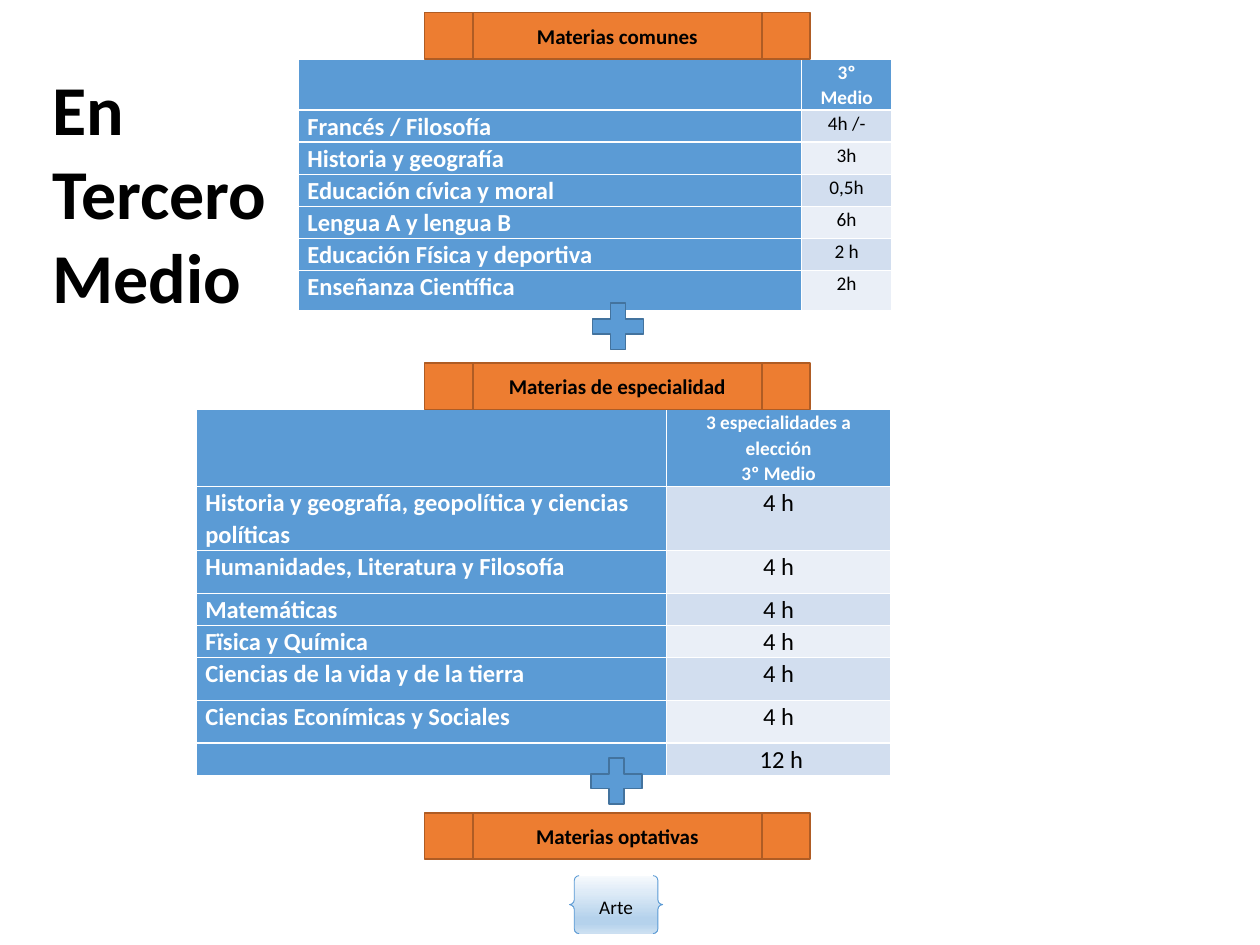
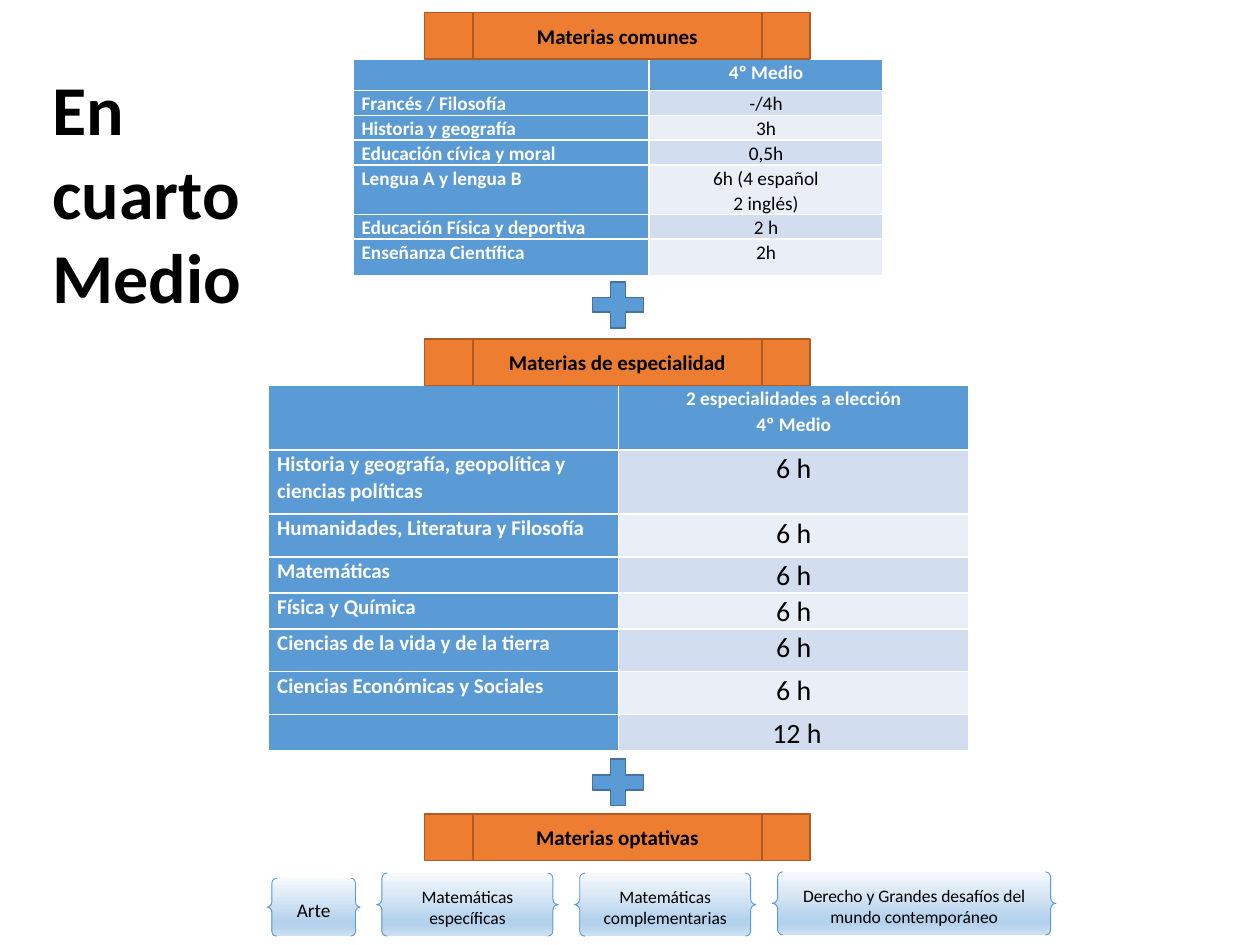
from lxml.etree import SubElement
from pptx import Presentation
from pptx.dml.color import RGBColor
from pptx.enum.shapes import MSO_SHAPE
from pptx.enum.text import MSO_ANCHOR, PP_ALIGN
from pptx.oxml.ns import qn
from pptx.util import Inches, Pt

prs = Presentation()
prs.slide_width, prs.slide_height = Inches(10), Inches(7.5)
COL, ROW = prs.slide_width / 100, prs.slide_height / 75  # grid of 100 x 75

BLACK, WHITE, BLUE, ORANGE = "000000", "FFFFFF", "5B9BD5", "ED7D31"
BANDS = ["D2DEEF", "EAEFF7"]
SHEEN = [(0, "F7FAFD"), (28, "DEEBF7"), (74, "B5D2EC"), (83, "B5D2EC"), (100, "CEE1F2")]
BANNER = {"left": 33.7, "width": 30.6, "height": 3.7}
LABELS = ["Materias comunes", "Materias de especialidad", "Materias optativas"]
LEFT, CENTER = PP_ALIGN.LEFT, PP_ALIGN.CENTER


def write(tf, text, size, color=BLACK, bold=False, align=CENTER, spacing=None):
    """Fill a text frame, one paragraph per line of text."""
    for i, line in enumerate(text.split("\n")):
        p = tf.add_paragraph() if i else tf.paragraphs[0]
        p.alignment, p.line_spacing = align, spacing
        if line:
            r = p.add_run()
            r.text = line
            r.font.color.rgb = RGBColor.from_string(color)
            for name, value in {"name": "Calibri", "size": Pt(size), "bold": bold}.items():
                setattr(r.font, name, value)
        else:  # keeps an empty cell as low as its row
            SubElement(p._p, qn("a:endParaRPr"), sz=str(size * 100))


def add_box(s, kind, left, top, width, height, fill, line, weight=1):
    """Add a preset shape placed in grid units."""
    sp = s.shapes.add_shape(kind, int(left * COL), int(top * ROW), int(width * COL), int(height * ROW))
    sp.shadow.inherit = False
    sp.fill.solid()
    sp.fill.fore_color.rgb = RGBColor.from_string(fill)
    sp.line.color.rgb = RGBColor.from_string(line)
    sp.line.width = Pt(weight)
    sp.text_frame.word_wrap = True
    sp.text_frame.vertical_anchor = MSO_ANCHOR.MIDDLE
    return sp


COMMON = ["Francés / Filosofía", "Historia y geografía", "Educación cívica y moral",
          "Lengua A y lengua B", "Educación Física y deportiva", "Enseñanza Científica"]
SPECIAL = ["Historia y geografía, geopolítica y ciencias políticas",
           "Humanidades, Literatura y Filosofía", "Matemáticas"]
LIFE = "Ciencias de la vida y de la tierra"

# Table: left, column widths, row heights, subject size, hours size, subjects, hours
years = [
    {"title": "En Tercero Medio",
     "banners": [1, 28.8, 64.5],
     "pluses": [(46.3, 23.4), (46.2, 59.5)],
     "tables": [
         (23.7, [39.9, 7.2], [4] + [2.55] * 5 + [3.2], 14, 11, COMMON,
          ["3º Medio", "4h /-", "3h", "0,5h", "6h", "2 h", "2h"]),
         (15.6, [37.3, 17.8], [6.1, 5.1, 3.4, 2.55, 2.55, 3.4, 3.4, 2.55], 14, 14,
          SPECIAL + ["Fïsica y Química", LIFE, "Ciencias Econímicas y Sociales", ""],
          ["3 especialidades a elección\n3º Medio"] + ["4 h"] * 6 + [" 12 h"])],
     "options": [("Arte", 45.2, 69.5, 7.4, 4.6, 11)]},
    {"title": "En cuarto Medio",
     "banners": [1, 26.9, 64.6],
     "pluses": [(46.3, 21.7), (46.3, 59.6)],
     "tables": [
         (28, [23.5, 18.6], [2.5, 1.95, 1.95, 1.95, 3.9, 1.95, 2.9], 11, 11, COMMON,
          ["4º Medio", "-/4h", "3h", "0,5h", "6h (4 español\n2 inglés)", "2 h", "2h"]),
         (21.3, [27.8, 27.8], [5.1, 5.1, 3.4, 2.85, 2.85, 3.4, 3.4, 2.85], 12, 16,
          SPECIAL + ["Física y Química", LIFE, "Ciencias Económicas y Sociales", ""],
          ["2 especialidades a elección\n4º Medio"] + ["6 h"] * 6 + [" 12 h"])],
     "options": [("Arte", 21.2, 69.7, 7.4, 4.6, 11),
                 ("Matemáticas específicas", 29.9, 69.3, 14.4, 5, 10),
                 ("Matemáticas complementarias", 45.6, 69.3, 14.4, 5, 10),
                 ("Derecho y Grandes desafíos del mundo contemporáneo", 61.3, 69.2, 22.5, 5, 10)]},
]

for year in years:
    s = prs.slides.add_slide(prs.slide_layouts[6])

    for banner_top, table in zip(year["banners"], year["tables"]):
        left, widths, heights, subject_size, hours_size, subjects, hours = table
        top = banner_top + BANNER["height"]
        tbl = s.shapes.add_table(len(heights), 2, int(left * COL), int(top * ROW),
                                 int(sum(widths) * COL), int(sum(heights) * ROW)).table
        for column, width in zip(tbl.columns, widths):
            column.width = int(width * COL)
        for i, (height, subject, hour) in enumerate(zip(heights, [""] + subjects, hours)):
            tbl.rows[i].height = int(height * ROW)
            head = i == 0
            formats = [(subject, subject_size, WHITE, True, LEFT, BLUE),
                       (hour, 11, WHITE, True, CENTER, BLUE) if head else
                       (hour, hours_size, BLACK, False, CENTER, BANDS[(i - 1) % 2])]
            for cell, (text, size, color, bold, align, fill) in zip(tbl.rows[i].cells, formats):
                cell.margin_left = cell.margin_right = Inches(0.07)
                cell.margin_top = cell.margin_bottom = 0
                cell.fill.solid()
                cell.fill.fore_color.rgb = RGBColor.from_string(fill)
                write(cell.text_frame, text, size, color, bold, align, 1.07)

    for text, left, top, width, height, size in year["options"]:
        sp = add_box(s, MSO_SHAPE.DOUBLE_BRACE, left, top, width, height, BLUE, BLUE, 0.5)
        sp.fill.gradient()
        sp.fill.gradient_angle = 270
        stops = sp._element.find(".//" + qn("a:gsLst"))
        stops.clear()
        for position, color in SHEEN:
            stop = SubElement(stops, qn("a:gs"), pos=str(position * 1000))
            SubElement(stop, qn("a:srgbClr"), val=color)
        write(sp.text_frame, text, size)

    for label, top in zip(LABELS, year["banners"]):
        sp = add_box(s, MSO_SHAPE.FLOWCHART_PREDEFINED_PROCESS, top=top, fill=ORANGE, line="AF5C24", **BANNER)
        write(sp.text_frame, label, 12, bold=True)

    for left, top in year["pluses"]:
        add_box(s, MSO_SHAPE.MATH_PLUS, left, top, 5.5, 5, BLUE, "43739E")

    tf = s.shapes.add_textbox(int(3.2 * COL), int(4.7 * ROW), int(21.5 * COL), int(21.2 * ROW)).text_frame
    tf.word_wrap = True
    write(tf, year["title"], 40, bold=True, align=LEFT)

prs.save("out.pptx")
